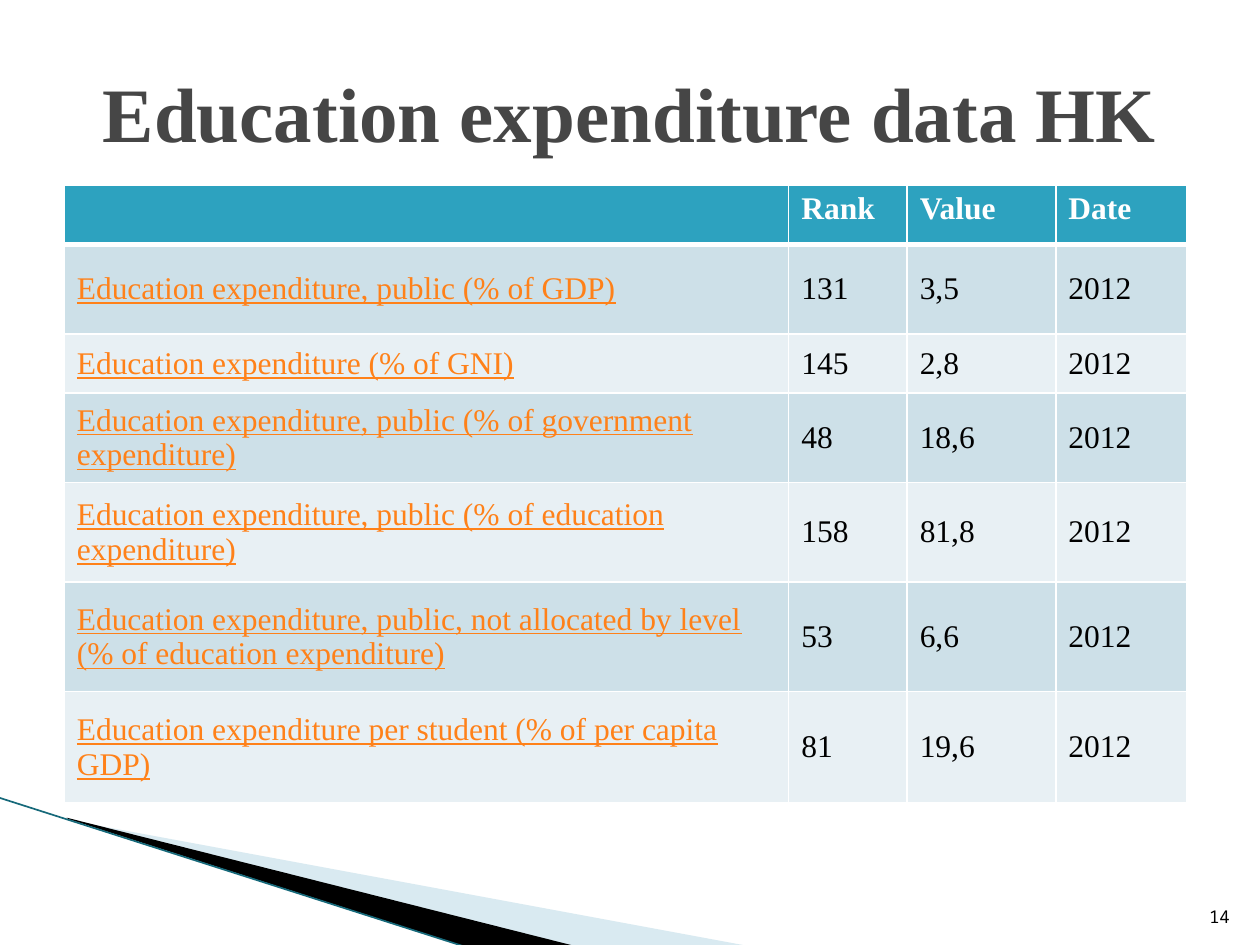
from lxml import etree
from pptx import Presentation
from pptx.dml.color import RGBColor
from pptx.enum.shapes import MSO_CONNECTOR as Conn
from pptx.enum.text import MSO_ANCHOR as Anchor, PP_ALIGN as Align
from pptx.oxml.ns import qn
from pptx.util import Inches, Pt

SERIF = "Times New Roman"
HEAD = ["", "Rank", "Value", "Date"]
ROWS = [
    ["Education expenditure, public (% of GDP)", "131", "3,5", "2012"],
    ["Education expenditure (% of GNI)", "145", "2,8", "2012"],
    ["Education expenditure, public (% of government expenditure)", "48", "18,6", "2012"],
    ["Education expenditure, public (% of education expenditure)", "158", "81,8", "2012"],
    ["Education expenditure, public, not allocated by level (% of education expenditure)",
     "53", "6,6", "2012"],
    ["Education expenditure per student (% of per capita GDP)", "81", "19,6", "2012"],
]
WIDTHS = [5.75, 0.94, 1.18, 1.04]
HEIGHTS = [0.47, 0.71, 0.47, 0.71, 0.79, 0.87, 0.88]


def paint(part, color):
    part.fill.solid()
    part.fill.fore_color.rgb = RGBColor.from_string(color)


def style(para, size, color, face=SERIF, bold=False, line=False):
    for run in para.runs:
        font = run.font
        font.size, font.name = Pt(size), face
        font.bold, font.underline = bold, line
        font.color.rgb = RGBColor.from_string(color)


def add_text(slide, box, text, align, anchor, **look):
    frame = slide.shapes.add_textbox(*map(Inches, box)).text_frame
    frame.word_wrap = True
    frame.vertical_anchor = anchor
    frame.text = text
    para = frame.paragraphs[0]
    para.alignment = align
    style(para, **look)


def add_wedge(slide, left, top, points, color, alpha=100):
    """Draw a filled outline; points are offsets from the top left."""
    spots = [(Inches(left + x), Inches(top + y)) for x, y in points]
    pen = slide.shapes.build_freeform(*spots[0])
    pen.add_line_segments(spots[1:], close=True)
    wedge = pen.convert_to_shape()
    wedge.shadow.inherit = False
    wedge.line.fill.background()
    paint(wedge, color)
    if alpha < 100:
        tone = wedge.fill._xPr.find(qn("a:solidFill"))[0]
        etree.SubElement(tone, qn("a:alpha"), val=str(alpha * 1000))


def add_swoosh(slide, left, top):
    """Corner decoration: pale wedge, black wedge and a thin edge line."""
    add_wedge(slide, left + 0.55, top + 0.17,
              [(0, 0.01), (5.4, 1.01), (4.01, 1.01), (0, 0)], "A0CBDC", 40)
    add_wedge(slide, left + 0.53, top + 0.16,
              [(0, 0), (4.04, 1.02), (3.19, 1.03), (0.01, 0.01)], "000000")
    edge = slide.shapes.add_connector(
        Conn.STRAIGHT, Inches(left - 0.01), Inches(top),
        Inches(left + 3.71), Inches(top + 1.19))
    edge.line.width = Pt(0.95)
    edge.line.color.rgb = RGBColor.from_string("16697A")
    etree.SubElement(edge._element.spPr, qn("a:effectLst"))


def add_edges(cell, base):
    """White cell borders; they must come before the fill."""
    props = cell._tc.get_or_add_tcPr()
    for side, width in zip("LRTB", (1, 1, 1, base)):
        edge = etree.SubElement(props, qn("a:ln" + side), w=str(Pt(width)))
        fill = etree.SubElement(edge, qn("a:solidFill"))
        etree.SubElement(fill, qn("a:srgbClr"), val="FFFFFF")


def add_grid(slide, left, top):
    box = map(Inches, (left, top, sum(WIDTHS), sum(HEIGHTS)))
    table = slide.shapes.add_table(len(HEIGHTS), len(WIDTHS), *box).table
    for col, width in zip(table.columns, WIDTHS):
        col.width = Inches(width)
    for row, height in zip(table.rows, HEIGHTS):
        row.height = Inches(height)
    for r, words in enumerate([HEAD] + ROWS):
        for c, word in enumerate(words):
            cell = table.cell(r, c)
            add_edges(cell, 3 if r == 0 else 1)
            cell.text = word
            para = cell.text_frame.paragraphs[0]
            if r == 0:
                paint(cell, "2DA2BF")
                style(para, 18, "FFFFFF", bold=True)
                continue
            cell.vertical_anchor = Anchor.MIDDLE
            paint(cell, "CDE0E8" if r % 2 else "E8F0F4")
            style(para, 18, "000000" if c else "FF8119", line=c == 0)
        # The top edge of the first body row matches the header rule
        if r == 1:
            for c in range(len(words)):
                table.cell(r, c)._tc.tcPr.find(qn("a:lnT")).set("w", str(Pt(3)))


def main():
    deck = Presentation()
    deck.slide_width, deck.slide_height = Inches(10), Inches(7.5)
    slide = deck.slides.add_slide(deck.slide_layouts[6])
    add_swoosh(slide, 0, 6.33)
    add_grid(slide, 0.51, 1.47)
    # Title and page number
    add_text(slide, (0.5, 0.3, 9, 1.17), "Education expenditure data HK",
             Align.CENTER, Anchor.MIDDLE, size=44, color="464646", bold=True)
    add_text(slide, (9.46, 7.01, 0.4, 0.4), "14", Align.RIGHT, Anchor.BOTTOM,
             size=10, color="000000", face="Noto Sans Mono")
    deck.save("out.pptx")


if __name__ == "__main__":
    main()
